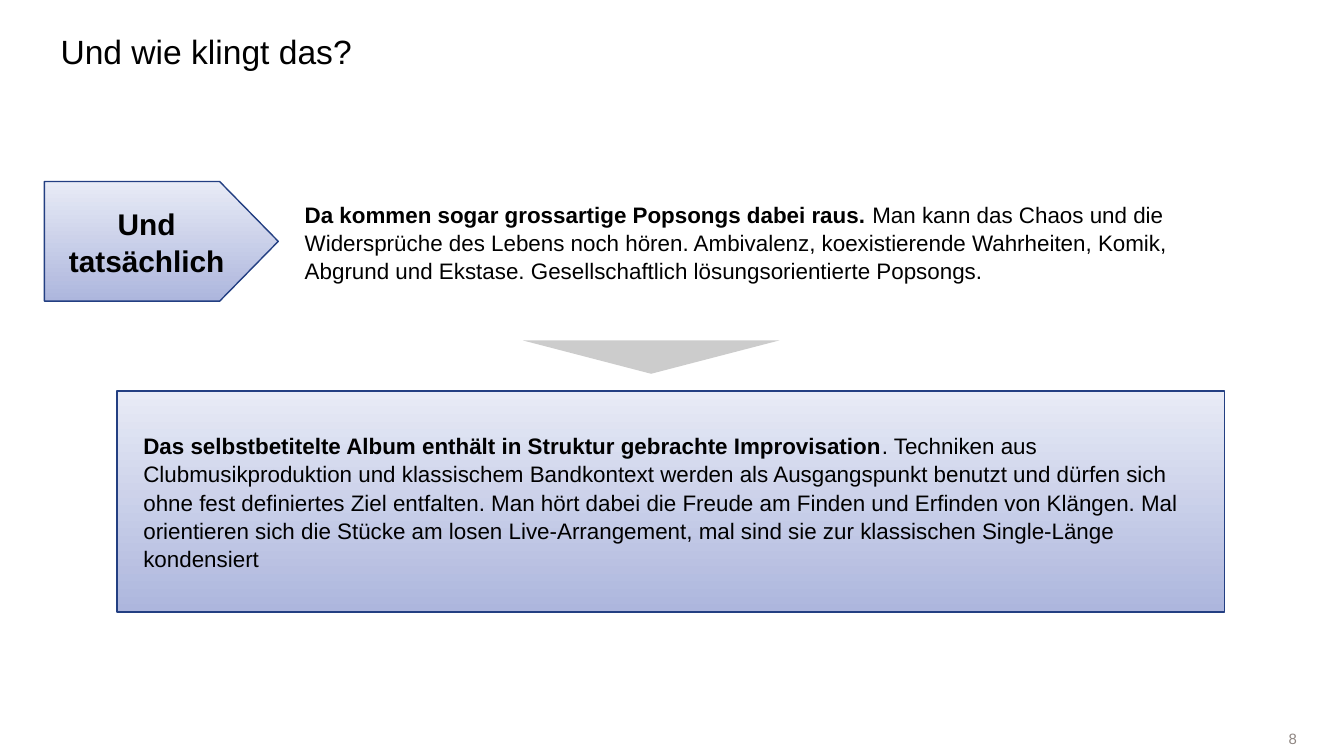
"""Build the slide about how the album sounds."""
import pptx
import pptx.dml.color
import pptx.enum.shapes
import pptx.enum.text
import pptx.util

Cm = pptx.util.Cm
Pt = pptx.util.Pt
Shape = pptx.enum.shapes.MSO_SHAPE
Align = pptx.enum.text.PP_ALIGN
Anchor = pptx.enum.text.MSO_ANCHOR

COLORS = {
    "text": "000000",
    "number": "8E8581",
    "pointer": "CCCCCC",
    "outline": "233F82",
    "light": "E8EBF6",
    "dark": "ADB6DD",
}


def rgb(name):
    return pptx.dml.color.RGBColor.from_string(COLORS[name])


class SlideBuilder:
    font = "Arial"
    spacing = 1.05

    def __init__(self, deck):
        self.page = deck.slides.add_slide(deck.slide_layouts[5])

    def format_span(self, span, size, bold=False, color="text"):
        span.font.name = self.font
        span.font.size = Pt(size)
        span.font.bold = bold
        span.font.color.rgb = rgb(color)

    def title(self, text, left, top, width, height):
        box = self.page.shapes.title
        box.left, box.top, box.width, box.height = map(Cm, (left, top, width, height))
        box.text_frame.text = text
        box.text_frame.vertical_anchor = Anchor.TOP
        para = box.text_frame.paragraphs[0]
        para.alignment = Align.LEFT
        para.line_spacing = 0.93
        self.format_span(para.runs[0], 18)

    def text_box(self, left, top, width, height):
        return self.page.shapes.add_textbox(*map(Cm, (left, top, width, height)))

    def shape(self, kind, left, top, width, height):
        box = self.page.shapes.add_shape(kind, *map(Cm, (left, top, width, height)))
        box.shadow.inherit = False
        return box

    def pointer(self, *place):
        box = self.shape(Shape.ISOSCELES_TRIANGLE, *place)
        box.rotation = 180
        box.fill.solid()
        box.fill.fore_color.rgb = rgb("pointer")
        box.line.fill.background()

    def panel(self, kind, *place):
        box = self.shape(kind, *place)
        box.fill.gradient()
        box.fill.gradient_angle = 90
        for stop, name, position in zip(box.fill.gradient_stops, ("dark", "light"), (0, 1)):
            stop.color.rgb = rgb(name)
            stop.position = position
        box.line.color.rgb = rgb("outline")
        box.line.width = Pt(0.75)
        return box

    def start_text(self, box, text, align, indent=0.0):
        frame = box.text_frame
        frame.word_wrap = True
        frame.vertical_anchor = Anchor.MIDDLE
        frame.margin_left = Cm(indent)
        frame.margin_top = frame.margin_right = frame.margin_bottom = 0
        frame.text = text
        para = frame.paragraphs[0]
        para.alignment = align
        return para

    def label(self, box, text):
        para = self.start_text(box, text, Align.CENTER)
        para.space_before = Pt(3)
        para.line_spacing = self.spacing
        self.format_span(para.runs[0], 16, bold=True)

    def statement(self, box, lead, *lines):
        para = self.start_text(box, lead, Align.LEFT, indent=0.5)
        para.space_before = Pt(3)
        para.line_spacing = self.spacing
        self.format_span(para.runs[0], 12, bold=True)
        for index, line in enumerate(lines):
            if index:
                para.add_line_break()
            span = para.add_run()
            span.text = line
            self.format_span(span, 12)

    def page_number(self, text, *place):
        para = self.start_text(self.text_box(*place), text, Align.RIGHT)
        self.format_span(para.runs[0], 8, color="number")


def main():
    deck = pptx.Presentation()
    deck.slide_width, deck.slide_height = Cm(25.4), Cm(14.28)
    slide = SlideBuilder(deck)

    slide.page_number("8", 20.9, 13.74, 3.61, 0.41)
    slide.title("Und wie klingt das?", 0.89, 0.53, 17.8, 1.6)
    slide.statement(
        slide.text_box(5.26, 3.43, 18.34, 2.28),
        "Da kommen sogar grossartige Popsongs dabei raus. ",
        "Man kann das Chaos und die Widersprüche des Lebens noch hören. "
        "Ambivalenz, koexistierende Wahrheiten, Komik, Abgrund und Ekstase. "
        "Gesellschaftlich lösungsorientierte Popsongs.",
    )
    slide.pointer(9.88, 6.43, 4.85, 0.63)

    arrow = slide.panel(Shape.PENTAGON, 0.84, 3.43, 4.42, 2.26)
    arrow.adjustments[0] = 0.49
    slide.label(arrow, "Und tatsächlich")

    slide.statement(
        slide.panel(Shape.RECTANGLE, 2.21, 7.39, 20.93, 4.17),
        "Das selbstbetitelte Album enthält in Struktur gebrachte Improvisation",
        ". Techniken aus Clubmusikproduktion und klassischem Bandkontext werden "
        "als Ausgangspunkt benutzt und dürfen sich ",
        "ohne fest definiertes Ziel entfalten. Man hört dabei die Freude am Finden "
        "und Erfinden von Klängen. Mal orientieren sich die Stücke am losen "
        "Live-Arrangement, mal sind sie zur klassischen Single-Länge kondensiert",
    )
    deck.save("out.pptx")


if __name__ == "__main__":
    main()
